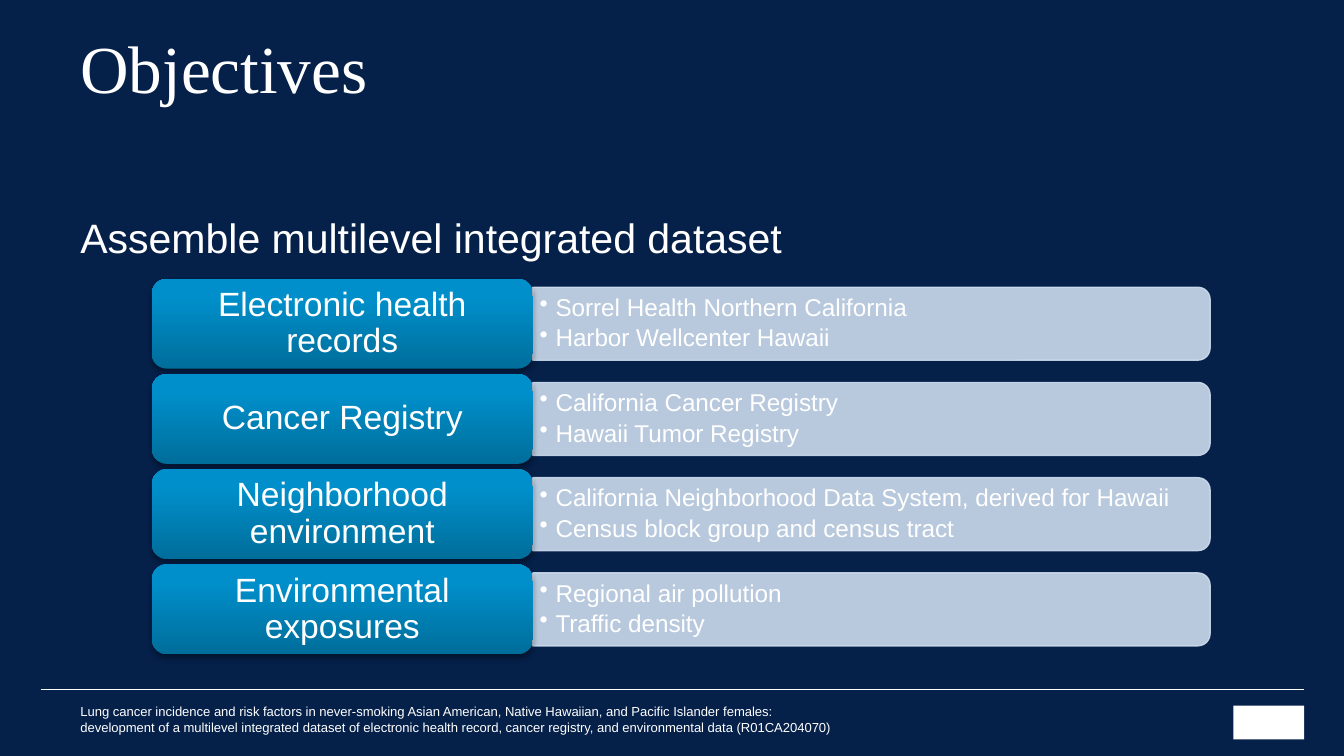
from lxml.etree import SubElement
from pptx import Presentation
from pptx.dml.color import RGBColor
from pptx.enum.shapes import MSO_CONNECTOR, MSO_SHAPE
from pptx.enum.text import MSO_ANCHOR, PP_ALIGN
from pptx.oxml.ns import qn
from pptx.util import Cm, Pt

COLORS = {
    "navy": "052049",
    "white": "FFFFFF",
    "band": "CCDCEE",
    "blue_dark": "006E9B",
    "blue": "008FCA",
    "shadow": "000000",
}

ROWS = [
    ("Electronic health records",
     ["Sorrel Health Northern California", "Harbor Wellcenter Hawaii"]),
    ("Cancer Registry",
     ["California Cancer Registry", "Hawaii Tumor Registry"]),
    ("Neighborhood environment",
     ["California Neighborhood Data System, derived for Hawaii",
      "Census block group and census tract"]),
    ("Environmental exposures",
     ["Regional air pollution", "Traffic density"]),
]

FOOTER = (
    "Lung cancer incidence and risk factors in never-smoking Asian American, "
    "Native Hawaiian, and Pacific Islander females: development of a multilevel "
    "integrated dataset of electronic health record, cancer registry, and "
    "environmental data (R01CA204070)"
)


def rgb(name):
    return RGBColor.from_string(COLORS[name])


def add_alpha(color_parent, percent):
    clr = color_parent.find(".//" + qn("a:srgbClr"))
    SubElement(clr, qn("a:alpha"), val=str(percent * 1000))


class SlideBuilder:
    def __init__(self, slide):
        self.s = slide
        self.font = "Arial"
        fill = slide.background.fill
        fill.solid()
        fill.fore_color.rgb = rgb("navy")

    def add_lines(self, sp, lines, size, font=None, anchor=MSO_ANCHOR.TOP,
                  align=PP_ALIGN.LEFT, spacing=1.0, after=0,
                  inset=(0.25, 0.13), bullet=False):
        tf = sp.text_frame
        tf.word_wrap = True
        tf.vertical_anchor = anchor
        tf.margin_left = tf.margin_right = Cm(inset[0])
        tf.margin_top = tf.margin_bottom = Cm(inset[1])
        for i, line in enumerate(lines):
            p = tf.paragraphs[0] if i == 0 else tf.add_paragraph()
            p.alignment = align
            p.line_spacing = spacing
            p.space_after = Pt(after)
            if bullet:
                pPr = p._p.get_or_add_pPr()
                pPr.set("marL", str(Cm(0.3)))
                pPr.set("indent", str(-Cm(0.3)))
                SubElement(pPr, qn("a:buChar"), char="•")
            r = p.add_run()
            r.text = line
            r.font.size = Pt(size)
            r.font.name = font or self.font
            r.font.color.rgb = rgb("white")

    def text(self, x, y, w, h, lines, size, **style):
        sp = self.s.shapes.add_textbox(Cm(x), Cm(y), Cm(w), Cm(h))
        self.add_lines(sp, lines, size, **style)

    def shape(self, kind, x, y, w, h):
        sp = self.s.shapes.add_shape(kind, Cm(x), Cm(y), Cm(w), Cm(h))
        sp.shadow.inherit = False
        sp.line.fill.background()
        return sp

    def block(self, x, y, w, h, color):
        sp = self.shape(MSO_SHAPE.RECTANGLE, x, y, w, h)
        sp.fill.solid()
        sp.fill.fore_color.rgb = rgb(color)

    def band(self, x, y, w, h, lines):
        # Turned a quarter so that the rounded corners face right
        sp = self.shape(MSO_SHAPE.ROUND_2_SAME_RECTANGLE,
                        x + (w - h) / 2, y + (h - w) / 2, h, w)
        sp.rotation = 90
        sp.fill.solid()
        sp.fill.fore_color.rgb = rgb("band")
        sp.line.color.rgb = rgb("band")
        sp.line.width = Pt(0.75)
        spPr = sp._element.spPr
        add_alpha(spPr.find(qn("a:solidFill")), 90)
        add_alpha(spPr.find(qn("a:ln")), 90)
        self.text(x, y + 0.07, w - 0.07, h - 0.14, lines, 13,
                  anchor=MSO_ANCHOR.MIDDLE, spacing=0.9, after=2.3,
                  inset=(0.13, 0.08), bullet=True)

    def card(self, x, y, w, h, label):
        sp = self.shape(MSO_SHAPE.ROUNDED_RECTANGLE, x, y, w, h)
        sp.fill.gradient()
        sp.fill.gradient_angle = 90
        stops = sp.fill.gradient_stops
        for stop, pos, color in zip(stops, (0, 0.8), ("blue_dark", "blue")):
            stop.position = pos
            stop.color.rgb = rgb(color)
        effects = sp._element.spPr.find(qn("a:effectLst"))
        shadow = SubElement(effects, qn("a:outerShdw"), blurRad=str(Pt(3.1)),
                            dist=str(Pt(1.8)), dir="5400000", rotWithShape="0")
        SubElement(shadow, qn("a:srgbClr"), val=COLORS["shadow"])
        add_alpha(shadow, 35)
        self.add_lines(sp, [label], 18, anchor=MSO_ANCHOR.MIDDLE,
                       align=PP_ALIGN.CENTER, spacing=0.9, inset=(0.28, 0.18))

    def rule(self, x1, x2, y):
        ln = self.s.shapes.add_connector(
            MSO_CONNECTOR.STRAIGHT, Cm(x1), Cm(y), Cm(x2), Cm(y))
        ln.line.color.rgb = rgb("white")
        ln.line.width = Pt(0.25)
        SubElement(ln._element.spPr, qn("a:effectLst"))


def main():
    prs = Presentation()
    prs.slide_width, prs.slide_height = Cm(25.4), Cm(14.29)
    b = SlideBuilder(prs.slides.add_slide(prs.slide_layouts[6]))

    # Title and lead
    b.text(1.27, 0.89, 22.7, 1.27, ["Objectives"], 36, font="Times New Roman",
           anchor=MSO_ANCHOR.BOTTOM, spacing=0.85)
    b.text(1.27, 3.89, 22.6, 1.37, ["Assemble multilevel integrated dataset"],
           22, after=6)

    # Data sources: a label card with a band of details
    top, pitch = 5.27, 1.8
    card_x, card_w, card_h = 2.87, 7.2, 1.7
    band_w, band_h = 12.8, 1.38
    for i, (label, details) in enumerate(ROWS):
        y = top + i * pitch
        b.band(card_x + card_w, y + (card_h - band_h) / 2, band_w, band_h,
               details)
        b.card(card_x, y, card_w, card_h, label)

    # Footer with a plain block as the emblem
    b.rule(0.77, 24.64, 13.02)
    b.text(1.52, 13.61, 14.4, 0.28, [FOOTER], 7, anchor=MSO_ANCHOR.BOTTOM,
           inset=(0, 0))
    b.block(23.31, 13.34, 1.34, 0.64, "white")

    prs.save("out.pptx")


if __name__ == "__main__":
    main()
